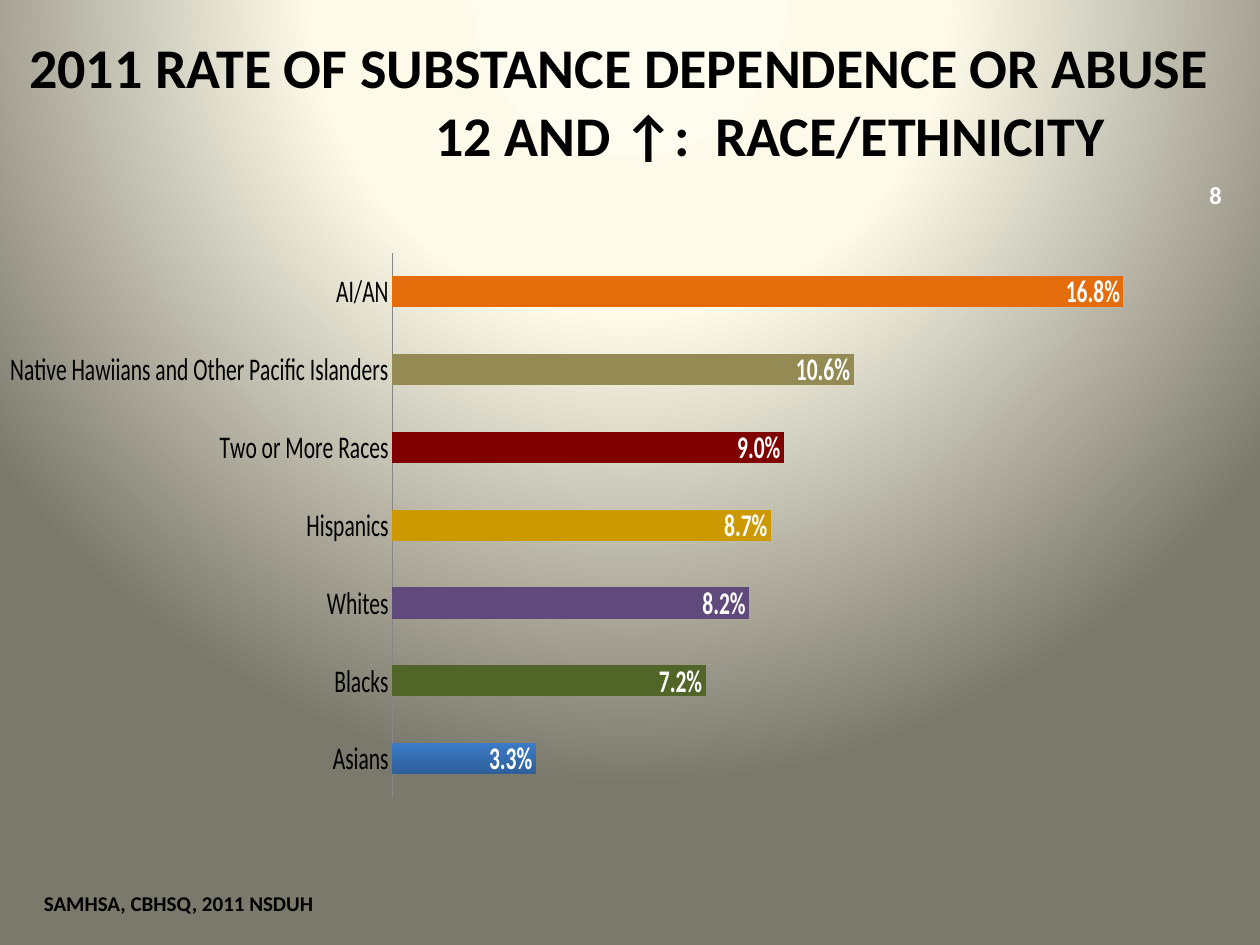
from pptx import Presentation
from pptx.chart.data import CategoryChartData
from pptx.dml.color import RGBColor
from pptx.enum.chart import XL_CHART_TYPE, XL_LABEL_POSITION, XL_TICK_MARK
from pptx.enum.text import MSO_ANCHOR, MSO_AUTO_SIZE, PP_ALIGN
from pptx.oxml import parse_xml
from pptx.oxml.ns import nsdecls
from pptx.util import Inches, Pt

# Category, rate in percent, bar colour (bottom to top)
RATES = [
    ("Asians", 3.3, None),
    ("Blacks", 7.2, "516529"),
    ("Whites", 8.2, "604A7B"),
    ("Hispanics", 8.7, "CC9900"),
    ("Two or More Races", 9.0, "800000"),
    ("Native Hawiians and Other Pacific Islanders", 10.6, "948A54"),
    ("AI/AN", 16.8, "E46C0A"),
]
BACKGROUND_STOPS = [(0, "FEFCEE"), (40, "FDFAEA"), (100, "7B796B")]


def rgb(value):
    return RGBColor.from_string(value)


class SlideBuilder:
    font = "Calibri"
    text_color = "000000"

    def __init__(self, prs):
        self.s = prs.slides.add_slide(prs.slide_layouts[5])

    def place(self, sp, x, y, w, h):
        sp.left, sp.top, sp.width, sp.height = map(Inches, (x, y, w, h))

    def style(self, font, size, color=None, bold=False):
        font.name, font.size, font.bold = self.font, Pt(size), bold
        font.color.rgb = rgb(color or self.text_color)

    def background(self, stops):
        """Fill the slide with a circular gradient centred above the middle."""
        fill = self.s.background.fill
        fill.solid()
        bg_pr = self.s.element.cSld.bg.bgPr
        gs = "".join(f'<a:gs pos="{pos * 1000}"><a:srgbClr val="{color}"/></a:gs>'
                     for pos, color in stops)
        grad = parse_xml(
            f'<a:gradFill {nsdecls("a")} rotWithShape="1"><a:gsLst>{gs}</a:gsLst>'
            '<a:path path="circle"><a:fillToRect l="50000" t="-80000" '
            'r="50000" b="180000"/></a:path></a:gradFill>')
        bg_pr.replace(bg_pr[0], grad)

    def title(self, lines, box, second_indent):
        sp = self.s.shapes.title
        self.place(sp, *box)
        tf = sp.text_frame
        tf.text = "\n".join(lines)
        tf.word_wrap = True
        tf.auto_size = MSO_AUTO_SIZE.NONE
        tf.vertical_anchor = MSO_ANCHOR.MIDDLE
        for p in tf.paragraphs:
            p.alignment = PP_ALIGN.CENTER
            self.style(p.font, 32, bold=True)
        tf.paragraphs[1]._p.get_or_add_pPr().set("marL", str(Inches(second_indent)))

    def text(self, text, box, size, color=None):
        tf = self.s.shapes.add_textbox(*map(Inches, box)).text_frame
        tf.word_wrap = True
        tf.vertical_anchor = MSO_ANCHOR.MIDDLE
        p = tf.paragraphs[0]
        p.text = text
        self.style(p.font, size, color, bold=True)

    def bar_chart(self, rates, box):
        data = CategoryChartData()
        data.categories = [name for name, _, _ in rates]
        data.add_series("Series 1", [value for _, value, _ in rates])
        chart = self.s.shapes.add_chart(
            XL_CHART_TYPE.BAR_CLUSTERED, *map(Inches, box), data).chart
        chart.has_legend = chart.has_title = False
        self.style(chart.font, 18)
        self.axes(chart)

        plot = chart.plots[0]
        plot.gap_width = 150
        plot.vary_by_categories = False
        self.bar_fills(plot.series[0], rates)
        plot.has_data_labels = True
        labels = plot.data_labels
        labels.show_value = True
        labels.number_format = '0.0"%"'
        labels.number_format_is_linked = False
        labels.position = XL_LABEL_POSITION.INSIDE_END
        self.style(labels.font, 18, "FFFFFF", bold=True)
        self.inner_layout(chart, x=0.001, y=0.001, w=0.949, h=0.896)

    def axes(self, chart):
        value_axis, category_axis = chart.value_axis, chart.category_axis
        value_axis.visible = False
        value_axis.has_major_gridlines = False
        value_axis.minimum_scale, value_axis.maximum_scale = 0, 18
        category_axis.major_tick_mark = XL_TICK_MARK.NONE
        category_axis.format.line.color.rgb = rgb("878787")
        self.style(category_axis.tick_labels.font, 18)

    def bar_fills(self, series, rates):
        series.format.fill.solid()
        series.format.fill.fore_color.rgb = rgb("4F81BD")
        for i, (_, _, color) in enumerate(rates):
            fill = series.points[i].format.fill
            if color:
                fill.solid()
                fill.fore_color.rgb = rgb(color)
            else:
                fill.gradient()
                fill.gradient_angle = 270
                for stop, shade in zip(fill.gradient_stops, ("3C7BC7", "2E5F99")):
                    stop.color.rgb = rgb(shade)

    def inner_layout(self, chart, **fractions):
        """Fix the plot area, without its axis labels, inside the chart."""
        plot_area = chart._chartSpace.chart.plotArea
        for old in plot_area.xpath("c:layout"):
            plot_area.remove(old)
        modes = '<c:xMode val="edge"/><c:yMode val="edge"/>'
        sizes = "".join(f'<c:{k} val="{v}"/>' for k, v in fractions.items())
        plot_area.insert(0, parse_xml(
            f'<c:layout {nsdecls("c")}><c:manualLayout>'
            f'<c:layoutTarget val="inner"/>{modes}{sizes}'
            '</c:manualLayout></c:layout>'))


def main():
    prs = Presentation()
    prs.slide_width, prs.slide_height = Inches(10), Inches(7.5)
    slide = SlideBuilder(prs)
    slide.background(BACKGROUND_STOPS)
    slide.text("8", (9.5, 1.42, 0.5, 0.25), 14, "FFFFFF")
    slide.title(["2011 RATE OF SUBSTANCE DEPENDENCE OR ABUSE",
                 "12 AND ↑:  RACE/ETHNICITY"],
                (0.08, 0.17, 9.67, 1.25), second_indent=2.4)
    slide.bar_chart(RATES, (0.08, 2, 9.58, 4.83))
    slide.text("SAMHSA, CBHSQ, 2011 NSDUH", (0.25, 7.02, 3.58, 0.3), 12)
    prs.save("out.pptx")


if __name__ == "__main__":
    main()
